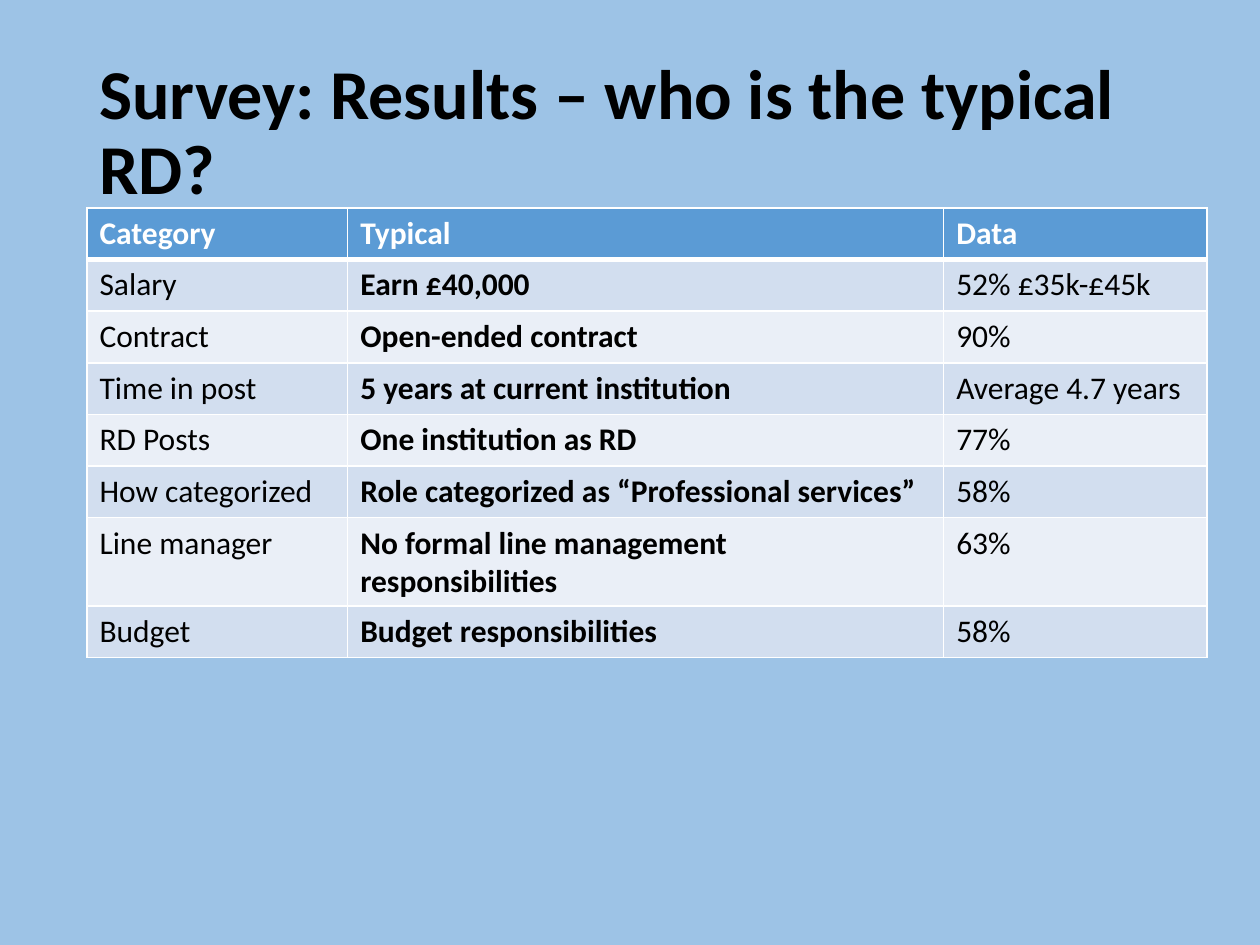
from pptx import Presentation
from pptx.dml.color import RGBColor
from pptx.enum.text import MSO_ANCHOR
from pptx.oxml import parse_xml
from pptx.oxml.ns import nsdecls
from pptx.util import Inches, Pt

COLORS = {
    "background": "9DC3E6",
    "header": "5B9BD5",
    "band_dark": "D2DEEF",
    "band_light": "EAEFF7",
    "white": "FFFFFF",
    "black": "000000",
}
FONT = "Calibri"
COLUMN_WIDTHS = (2.07, 4.73, 2.09)
ROW_HEIGHT = 0.41
RESULTS = [
    ("Category", "Typical", "Data"),
    ("Salary", "Earn £40,000", "52% £35k-£45k"),
    ("Contract", "Open-ended contract", "90%"),
    ("Time in post", "5 years at current institution", "Average 4.7 years"),
    ("RD Posts", "One institution as RD", "77%"),
    ("How categorized", "Role categorized as “Professional services”", "58%"),
    ("Line manager", "No formal line management responsibilities", "63%"),
    ("Budget", "Budget responsibilities", "58%"),
]


def rgb(name):
    return RGBColor.from_string(COLORS[name])


def add_run(p, text, size, color, bold):
    r = p.add_run()
    r.text = text
    r.font.name = FONT
    r.font.size = Pt(size)
    r.font.bold = bold
    r.font.color.rgb = rgb(color)


def add_title(s, text):
    sp = s.shapes.add_textbox(Inches(0.69), Inches(0.34), Inches(8.89), Inches(1.45))
    tf = sp.text_frame
    tf.word_wrap = True
    tf.vertical_anchor = MSO_ANCHOR.MIDDLE
    p = tf.paragraphs[0]
    p.line_spacing = 0.9
    add_run(p, text, 40, "black", True)


def set_borders(cell, top, bottom):
    tc_pr = cell._tc.get_or_add_tcPr()
    for i, (side, width) in enumerate(zip("LRTB", (1, 1, top, bottom))):
        tc_pr.insert(i, parse_xml(
            f'<a:ln{side} {nsdecls("a")} w="{Pt(width)}"><a:solidFill>'
            f'<a:srgbClr val="{COLORS["white"]}"/></a:solidFill></a:ln{side}>'))


def fill_cell(cell, text, row, col):
    header = row == 0
    band = "band_dark" if row % 2 else "band_light"
    cell.fill.solid()
    cell.fill.fore_color.rgb = rgb("header" if header else band)
    set_borders(cell, 3 if row == 1 else 1, 3 if header else 1)
    add_run(cell.text_frame.paragraphs[0], text, 18,
            "white" if header else "black", header or col == 1)


def add_results_table(s, rows):
    table = s.shapes.add_table(
        len(rows), len(COLUMN_WIDTHS), Inches(0.69), Inches(1.65),
        Inches(sum(COLUMN_WIDTHS)), Inches(ROW_HEIGHT * len(rows))).table
    for column, width in zip(table.columns, COLUMN_WIDTHS):
        column.width = Inches(width)
    for i, texts in enumerate(rows):
        table.rows[i].height = Inches(ROW_HEIGHT)
        for j, text in enumerate(texts):
            fill_cell(table.cell(i, j), text, i, j)


def main():
    prs = Presentation()
    prs.slide_width, prs.slide_height = Inches(10), Inches(7.5)
    s = prs.slides.add_slide(prs.slide_layouts[6])
    s.background.fill.solid()
    s.background.fill.fore_color.rgb = rgb("background")
    add_title(s, "Survey: Results – who is the typical RD?")
    add_results_table(s, RESULTS)
    prs.save("out.pptx")


if __name__ == "__main__":
    main()
